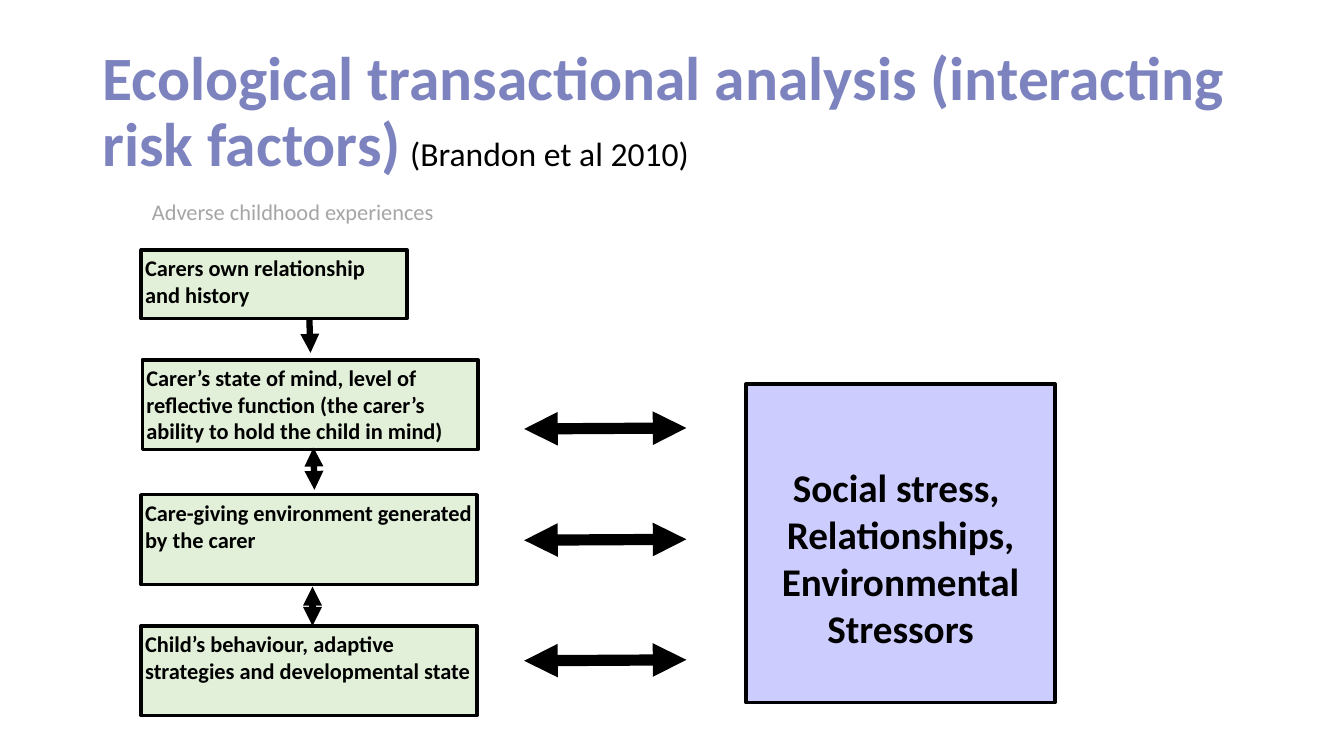
"""Build the slide on interacting risk factors in ecological transactional analysis."""
from lxml import etree
from pptx import Presentation
from pptx.dml.color import RGBColor
from pptx.enum import shapes, text
from pptx.oxml.ns import qn
from pptx.util import Pt

COLOURS = {"title": "7D83BF", "ink": "000000", "muted": "A6A6A6",
           "carer": "E2F0D9", "stress": "CCCCFF"}
TITLE = [("Ecological transactional analysis (interacting risk factors)", 44, True, "title"),
         (" ", 28, True, "title"),
         ("(Brandon et al 2010)", 24, False, "ink")]
TITLE_AREA = (66, 28.8, 828, 104.4)
LABEL = ("Adverse childhood experiences", (100.8, 138.3, 216.7, 40.3))
FACTORS = [
    ("Carers own relationship and history", (100.8, 178.6, 190, 49)),
    ("Carer’s state of mind, level of reflective function "
     "(the carer’s ability to hold the child in mind)", (101.7, 257, 239.8, 64.1)),
    ("Care-giving environment generated by the carer", (100.8, 353.4, 239.8, 64.1)),
    ("Child’s behaviour, adaptive strategies and developmental state",
     (100.8, 447.1, 239.8, 64.1)),
]
STRESSORS = (["Social stress, ", "Relationships,", "Environmental Stressors"],
             (532.8, 274.3, 221, 227.5))
DOWN_ARROWS = [((221, 228.2), (221.8, 252), False),
               ((223.9, 319.7), (224.6, 349.9), True),
               ((223.2, 419), (223.2, 447.1), True)]
STRESS_LEVELS = [306.4, 385.9, 472]
STRESS_SPAN = (374.4, 490.3)
INSET = 2.9


def rgb(name):
    return RGBColor.from_string(COLOURS[name])


def add_run(paragraph, words, size=16, bold=False, colour="ink"):
    run = paragraph.add_run()
    run.text = words
    run.font.name = "Calibri"
    run.font.size = Pt(size)
    run.font.bold = bold
    run.font.color.rgb = rgb(colour)


def write(frame, lines, align=text.PP_ALIGN.LEFT, top=INSET, **style):
    frame.word_wrap = True
    frame.vertical_anchor = text.MSO_ANCHOR.TOP
    frame.margin_left = frame.margin_right = frame.margin_bottom = Pt(INSET)
    frame.margin_top = Pt(top)
    for index, line in enumerate(lines):
        paragraph = frame.add_paragraph() if index else frame.paragraphs[0]
        paragraph.alignment = align
        add_run(paragraph, line, **style)


def add_box(slide, lines, area, fill, **style):
    box = slide.shapes.add_shape(shapes.MSO_SHAPE.RECTANGLE, *map(Pt, area))
    box.shadow.inherit = False
    box.fill.solid()
    box.fill.fore_color.rgb = rgb(fill)
    box.line.color.rgb = rgb("ink")
    box.line.width = Pt(2.5)
    write(box.text_frame, lines, bold=True, **style)


def add_arrow(slide, start, end, width, both=True):
    arrow = slide.shapes.add_connector(
        shapes.MSO_CONNECTOR.STRAIGHT, *map(Pt, start + end))
    arrow.line.color.rgb = rgb("ink")
    arrow.line.width = Pt(width)
    outline = arrow.line._get_or_add_ln()
    for tip in ("a:headEnd", "a:tailEnd") if both else ("a:tailEnd",):
        etree.SubElement(outline, qn(tip), type="triangle")
    etree.SubElement(arrow._element.spPr, qn("a:effectLst"))


def add_title(slide):
    title = slide.shapes.title
    title.left, title.top, title.width, title.height = map(Pt, TITLE_AREA)
    frame = title.text_frame
    frame.auto_size = text.MSO_AUTO_SIZE.NONE
    frame.vertical_anchor = text.MSO_ANCHOR.MIDDLE
    heading = frame.paragraphs[0]
    heading.alignment = text.PP_ALIGN.LEFT
    heading.line_spacing = 0.9
    for part in TITLE:
        add_run(heading, *part)


def main():
    deck = Presentation()
    deck.slide_width, deck.slide_height = Pt(960), Pt(540)
    slide = deck.slides.add_slide(deck.slide_layouts[5])
    add_title(slide)

    for factor, area in FACTORS:
        add_box(slide, [factor], area, "carer")
    stressors, area = STRESSORS
    add_box(slide, stressors, area, "stress", size=28, top=56.6,
            align=text.PP_ALIGN.CENTER)

    left, right = STRESS_SPAN
    for level in STRESS_LEVELS:
        add_arrow(slide, (left, level), (right, level - 0.7), 8)

    label, area = LABEL
    caption = slide.shapes.add_textbox(*map(Pt, area))
    write(caption.text_frame, [label], align=text.PP_ALIGN.CENTER, colour="muted")

    for start, end, both in DOWN_ARROWS:
        add_arrow(slide, start, end, 4.5, both)
    deck.save("out.pptx")


if __name__ == "__main__":
    main()
